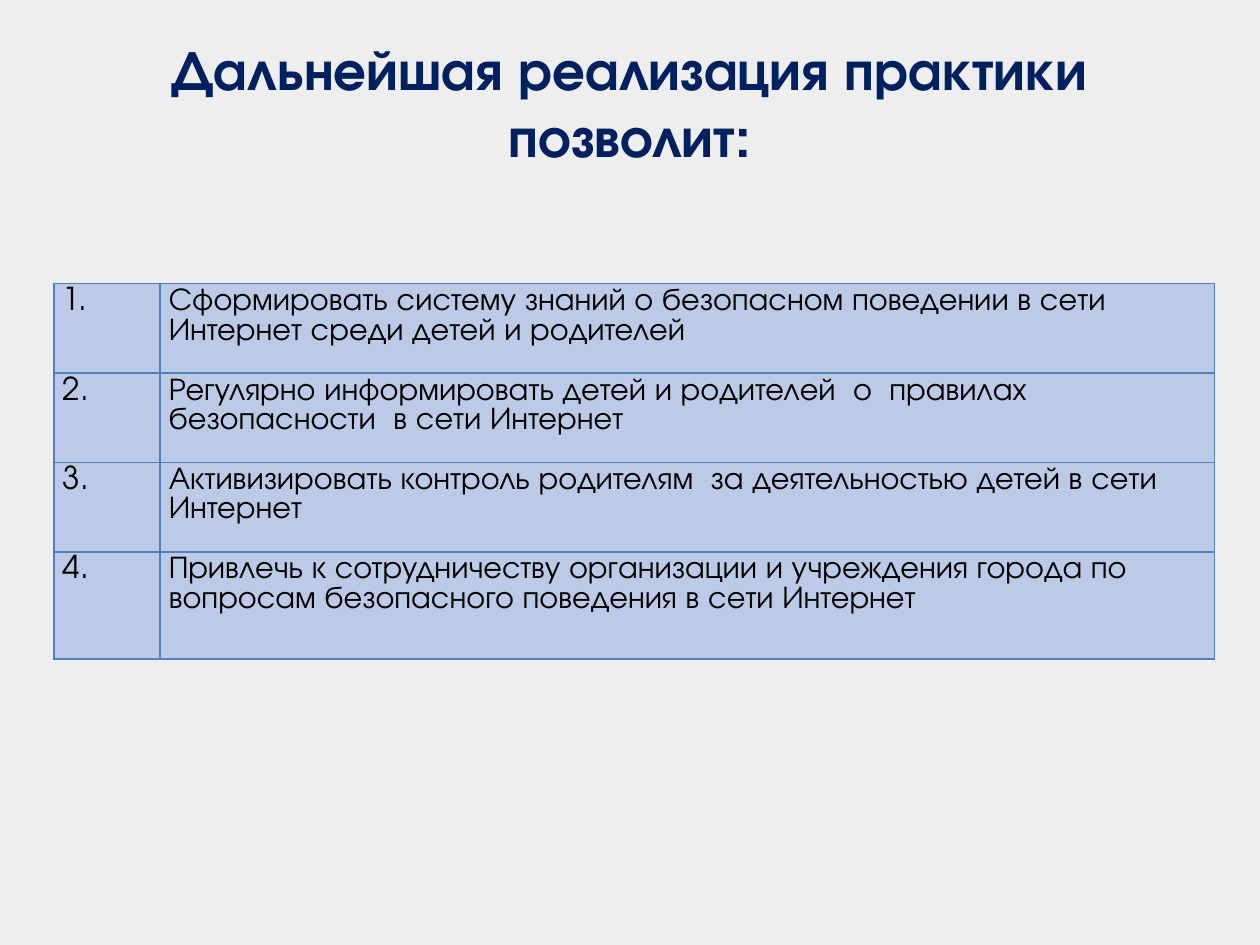
from dataclasses import dataclass

from lxml.etree import SubElement
from pptx import Presentation
from pptx.dml.color import RGBColor
from pptx.enum.text import MSO_ANCHOR, PP_ALIGN
from pptx.oxml.ns import qn
from pptx.slide import Slide
from pptx.table import _Cell
from pptx.text.text import _Paragraph
from pptx.util import Emu, Inches, Pt


@dataclass(frozen=True)
class Theme:
    font: str = "TeX Gyre Adventor"
    background: str = "EEEEEE"
    title: str = "002060"
    text: str = "000000"
    cell: str = "BCC9E7"
    border: str = "4F81BD"
    title_size: int = 32
    text_size: int = 18
    border_width: int = 1


@dataclass(frozen=True)
class Area:
    """Left, top, width and height as shares of the slide."""
    left: float
    top: float
    width: float
    height: float

    def on(self, width: int, height: int) -> tuple[Emu, ...]:
        return (Emu(int(self.left * width)), Emu(int(self.top * height)),
                Emu(int(self.width * width)), Emu(int(self.height * height)))


@dataclass(frozen=True)
class Goal:
    text: str
    height: float = 0.71


THEME = Theme()
WIDTH, HEIGHT = Inches(10), Inches(7.5)
TITLE = "Дальнейшая реализация практики позволит:"
TITLE_AREA = Area(0.05, 0.5 / 7.5, 0.9, 0.89 / 7.5)
TABLE_AREA = Area(0.043, 0.3, 0.921, 2.98 / 7.5)
COLUMNS = (0.84, 8.37)
GOALS = (
    Goal("Сформировать систему знаний о безопасном поведении в сети Интернет "
         "среди детей и родителей"),
    Goal("Регулярно информировать детей и родителей  о  правилах "
         "безопасности  в сети Интернет"),
    Goal("Активизировать контроль родителям  за деятельностью детей в сети "
         "Интернет"),
    Goal("Привлечь к сотрудничеству организации и учреждения города по "
         "вопросам безопасного поведения в сети Интернет", height=0.85),
)


def format_runs(p: _Paragraph, size: int, color: str, bold: bool = False) -> None:
    for r in p.runs:
        r.font.name = THEME.font
        r.font.size = Pt(size)
        r.font.bold = bold
        r.font.color.rgb = RGBColor.from_string(color)


def add_title(s: Slide) -> None:
    sp = s.shapes.add_textbox(*TITLE_AREA.on(WIDTH, HEIGHT))
    tf = sp.text_frame
    tf.word_wrap = True
    tf.vertical_anchor = MSO_ANCHOR.BOTTOM
    tf.text = TITLE
    p = tf.paragraphs[0]
    p.alignment = PP_ALIGN.CENTER
    format_runs(p, THEME.title_size, THEME.title, bold=True)


def set_borders(cell: _Cell) -> None:
    """Outline the cell; borders must come before its fill in the XML."""
    props = cell._tc.get_or_add_tcPr()
    for side in ("a:lnL", "a:lnR", "a:lnT", "a:lnB"):
        line = SubElement(props, qn(side), w=str(Pt(THEME.border_width)))
        fill = SubElement(line, qn("a:solidFill"))
        SubElement(fill, qn("a:srgbClr"), val=THEME.border)


def fill_cell(cell: _Cell, text: str, hanging: float = 0) -> None:
    set_borders(cell)
    cell.fill.solid()
    cell.fill.fore_color.rgb = RGBColor.from_string(THEME.cell)
    cell.margin_left = cell.margin_right = Inches(0.07)
    cell.margin_top = Inches(0.03)
    cell.margin_bottom = 0
    cell.text_frame.text = text
    p = cell.text_frame.paragraphs[0]
    if hanging:
        props = p._p.get_or_add_pPr()
        props.set("marL", str(Inches(hanging)))
        props.set("indent", str(-Inches(hanging)))
    format_runs(p, THEME.text_size, THEME.text)


def add_goals(s: Slide) -> None:
    frame = s.shapes.add_table(len(GOALS), len(COLUMNS),
                               *TABLE_AREA.on(WIDTH, HEIGHT))
    table = frame.table
    table.first_row = table.horz_banding = False
    for column, width in zip(table.columns, COLUMNS):
        column.width = Inches(width)
    for number, (row, goal) in enumerate(zip(table.rows, GOALS), start=1):
        row.height = Inches(goal.height)
        fill_cell(row.cells[0], f"{number}.", hanging=0.38)
        fill_cell(row.cells[1], goal.text)


def main() -> None:
    prs = Presentation()
    prs.slide_width, prs.slide_height = WIDTH, HEIGHT
    s = prs.slides.add_slide(prs.slide_layouts[6])
    s.background.fill.solid()
    s.background.fill.fore_color.rgb = RGBColor.from_string(THEME.background)
    add_title(s)
    add_goals(s)
    prs.save("out.pptx")


if __name__ == "__main__":
    main()
